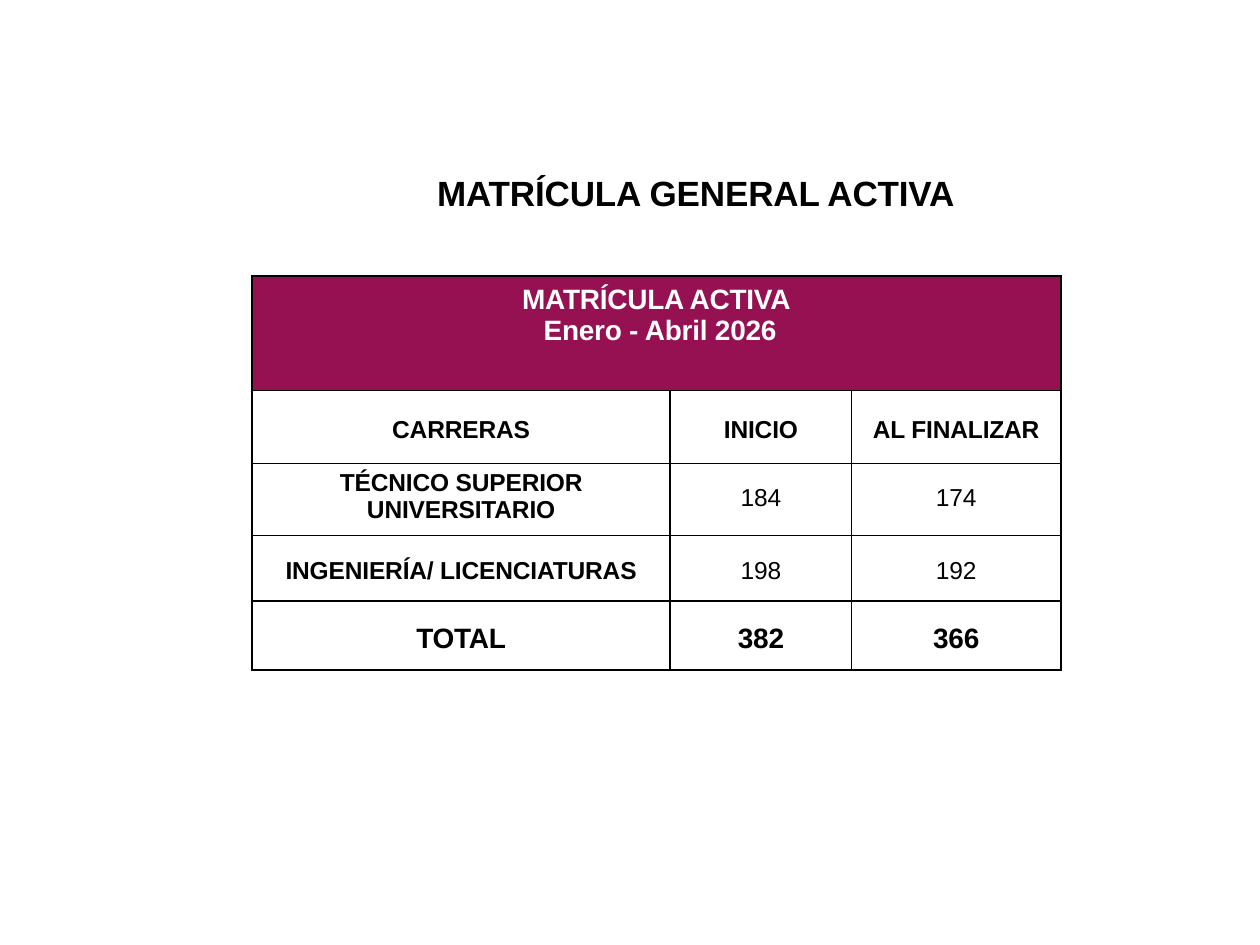
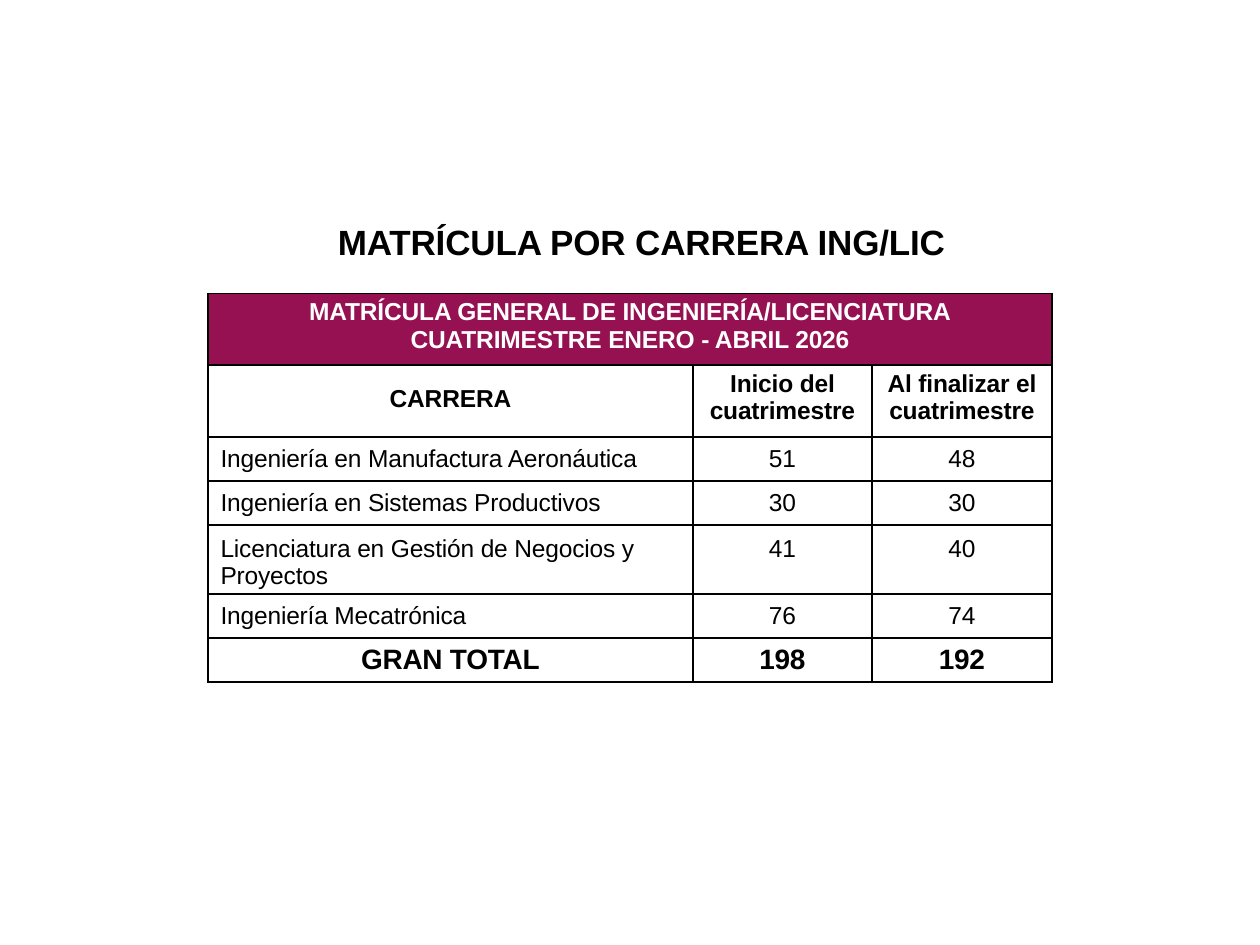
from lxml.etree import SubElement
from pptx import Presentation
from pptx.dml.color import RGBColor
from pptx.enum.text import MSO_ANCHOR as ANCHOR, MSO_AUTO_SIZE as AUTO, PP_ALIGN as ALIGN
from pptx.oxml.ns import qn
from pptx.util import Pt

FONT, BLACK, WHITE, WINE = "Arial", "000000", "FFFFFF", "951151"
TOP, MID = ANCHOR.TOP, ANCHOR.MIDDLE

SLIDES = [
    {
        "title": "MATRÍCULA GENERAL ACTIVA",
        "title_box": (144, 41.8, 419.8, 81.4),
        "title_insets": (105.8, 56.2),
        "table_at": (144, 157.7),
        "cols": (239, 103.7, 119.5),
        "band": {"lines": ("MATRÍCULA ACTIVA", "Enero - Abril 2026"),
                 "height": 65.5, "top": 5, "size": 16, "indent": 4.3},
        "label": {"bold": True, "align": ALIGN.CENTER, "left": 0},
        "rows": [
            ("head", 41.8, (2.9, 2.9), MID, ("CARRERAS", "INICIO", "AL FINALIZAR")),
            ("data", 41, (2.9, 11.5), TOP, ("TÉCNICO SUPERIOR UNIVERSITARIO", "184", "174")),
            ("data", 37.4, (2.9, 2.9), MID, ("INGENIERÍA/ LICENCIATURAS", "198", "192")),
            ("total", 39.6, (3.6, 3.6), MID, ("TOTAL", "382", "366")),
        ],
    },
    {
        "title": "MATRÍCULA POR CARRERA ING/LIC",
        "title_box": (72, 72, 491.8, 78.5),
        "title_insets": (121, 54),
        "table_at": (118.8, 167.6),
        "cols": (277.2, 102.2, 103),
        "band": {"lines": ("MATRÍCULA GENERAL DE INGENIERÍA/LICENCIATURA",
                           "CUATRIMESTRE ENERO - ABRIL 2026"),
                 "height": 41, "top": 2.9, "size": 14, "indent": 0},
        "label": {"bold": False, "align": ALIGN.LEFT, "left": 7.2},
        "rows": [
            ("head", 41, (11.5, 2.9), TOP,
             ("CARRERA", "Inicio del cuatrimestre", "Al finalizar el cuatrimestre")),
            ("data", 25.2, (5, 5), TOP, ("Ingeniería en Manufactura Aeronáutica", "51", "48")),
            ("data", 25.2, (5, 5), TOP, ("Ingeniería en Sistemas Productivos", "30", "30")),
            ("data", 27.4, (5.8, 5.8), TOP,
             ("Licenciatura en Gestión de Negocios y Proyectos", "41", "40")),
            ("data", 25.2, (5, 5), TOP, ("Ingeniería Mecatrónica", "76", "74")),
            ("total", 25.2, (3.6, 3.6), TOP, ("GRAN TOTAL", "198", "192")),
        ],
    },
]


def rgb(color):
    return RGBColor.from_string(color)


def set_all(obj, values):
    for name, value in values.items():
        setattr(obj, name, value)


def write(p, text, size, color=BLACK, bold=True, align=ALIGN.CENTER):
    set_all(p, {"alignment": align, "space_before": Pt(0)})
    r = p.add_run()
    r.text = text
    set_all(r.font, {"name": FONT, "size": Pt(size), "bold": bold})
    r.font.color.rgb = rgb(color)
    r._r.get_or_add_rPr().set("spc", "-10")


def add_title(s, data):
    sp = s.shapes.title
    box = zip(("left", "top", "width", "height"), map(Pt, data["title_box"]))
    set_all(sp, dict(box))
    left, top = data["title_insets"]
    tf = sp.text_frame
    set_all(tf, {"margin_left": Pt(left), "margin_top": Pt(top), "margin_right": 0,
                 "margin_bottom": 0, "word_wrap": True, "vertical_anchor": TOP,
                 "auto_size": AUTO.SHAPE_TO_FIT_TEXT})
    write(tf.paragraphs[0], data["title"], 20, align=ALIGN.LEFT)


def format_cell(cell, top, anchor=TOP, left=0, fill=None):
    set_all(cell, {"margin_left": Pt(left), "margin_top": Pt(top), "margin_right": 0,
                   "margin_bottom": 0, "vertical_anchor": anchor})
    tc_pr = cell._tc.get_or_add_tcPr()
    for side in ("lnL", "lnR", "lnT", "lnB"):
        ln = SubElement(tc_pr, qn("a:" + side), w=str(Pt(1)))
        SubElement(SubElement(ln, qn("a:solidFill")), qn("a:srgbClr"), val=BLACK)
    if fill:
        cell.fill.solid()
        cell.fill.fore_color.rgb = rgb(fill)
    else:
        cell.fill.background()


def add_band(table, band):
    table.rows[0].height = Pt(band["height"])
    for cell in table.rows[0].cells:
        format_cell(cell, band["top"], fill=WINE)
    first = table.cell(0, 0)
    first.merge(table.cell(0, len(table.columns) - 1))
    tf = first.text_frame
    for i, line in enumerate(band["lines"]):
        p = tf.add_paragraph() if i else tf.paragraphs[0]
        if i:
            p._p.get_or_add_pPr().set("marL", str(Pt(band["indent"])))
        write(p, line, band["size"], WHITE)


def add_enrolment_table(s, data):
    cols, rows, label = data["cols"], data["rows"], data["label"]
    height = data["band"]["height"] + sum(row[1] for row in rows)
    x, y = data["table_at"]
    table = s.shapes.add_table(len(rows) + 1, len(cols), Pt(x), Pt(y),
                               Pt(sum(cols)), Pt(height)).table
    for col, width in zip(table.columns, cols):
        col.width = Pt(width)
    add_band(table, data["band"])
    for i, (kind, row_height, tops, anchor, texts) in enumerate(rows, 1):
        table.rows[i].height = Pt(row_height)
        for j, text in enumerate(texts):
            cell = table.cell(i, j)
            is_label = kind == "data" and j == 0
            format_cell(cell, tops[min(j, 1)], anchor, label["left"] if is_label else 0)
            write(cell.text_frame.paragraphs[0], text, 16 if kind == "total" else 14,
                  bold=label["bold"] if is_label else kind != "data",
                  align=label["align"] if is_label else ALIGN.CENTER)


def main():
    prs = Presentation()
    set_all(prs, {"slide_width": Pt(720), "slide_height": Pt(540)})
    for data in SLIDES:
        s = prs.slides.add_slide(prs.slide_layouts[5])
        add_title(s, data)
        add_enrolment_table(s, data)
    prs.save("out.pptx")


if __name__ == "__main__":
    main()
